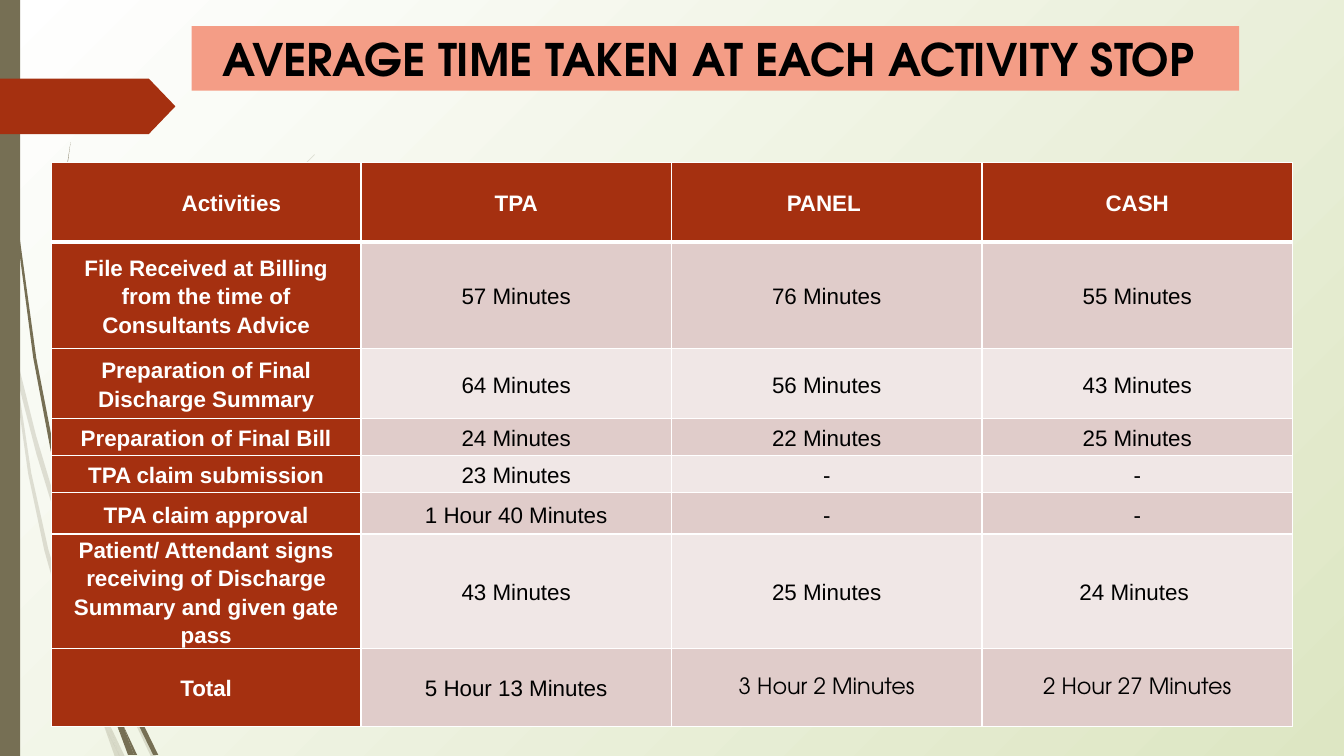
from dataclasses import dataclass

from lxml.etree import SubElement
from pptx import Presentation
from pptx.dml.color import RGBColor
from pptx.enum.shapes import MSO_SHAPE
from pptx.enum.text import MSO_ANCHOR, PP_ALIGN
from pptx.oxml import parse_xml
from pptx.oxml.ns import nsdecls, qn
from pptx.util import Inches, Pt

TITLE = "AVERAGE TIME TAKEN AT EACH ACTIVITY STOP "
ROWS = [
    ("Activities", "TPA", "PANEL ", "CASH"),
    ("File Received at Billing from the time of Consultants Advice",
     "57 Minutes", "76 Minutes", "55 Minutes"),
    ("Preparation of Final Discharge Summary", "64 Minutes", "56 Minutes", "43 Minutes"),
    ("Preparation of Final Bill", "24 Minutes", "22 Minutes", "25 Minutes"),
    ("TPA claim submission", "23 Minutes", "-", "-"),
    ("TPA claim approval", "1 Hour 40 Minutes", "-", "-"),
    ("Patient/ Attendant signs receiving of Discharge Summary and given gate pass",
     "43 Minutes", "25 Minutes", "24 Minutes "),
    ("Total", "5 Hour 13 Minutes", "3 Hour 2 Minutes", "2 Hour 27 Minutes"),
]
ROW_HEIGHTS = [0.79, 1.06, 0.69, 0.37, 0.37, 0.41, 0.89, 0.77]
COLUMN_WIDTHS = [3.07, 3.08, 3.08, 3.08]

PALE_WISPS = [
    [(0.11, 3.5), (0.09, 3.22), (0, 2.82), (0, 2.99), (0.1, 3.44)],
    [(0.58, 5.22), (0.84, 5.99), (0.85, 5.86), (0.62, 5.2), (0.36, 4.33),
     (0.14, 3.45), (0.17, 3.76), (0.36, 4.5)],
    [(0.92, 6.07), (0.88, 5.96), (0.88, 6.1), (1.23, 6.94), (1.5, 7.51),
     (1.55, 7.51), (1.27, 6.92)],
    [(1.19, 7.51), (1.24, 7.51), (1.05, 7.11)],
    [(0.93, 6.83), (0.7, 6.19), (0.48, 5.45), (0.31, 4.69), (0.17, 3.76),
     (0.11, 3.5), (0.28, 4.7), (0.44, 5.46), (0.65, 6.21), (0.92, 6.93),
     (1.01, 7.14), (0.99, 7.07)],
    [(0.88, 5.84), (0.95, 5.22), (1.1, 4.62), (1.6, 3.49), (2.29, 2.45),
     (2.68, 1.98), (3.12, 1.54), (3.12, 1.53), (2.68, 1.97), (2.28, 2.44),
     (1.58, 3.48), (1.07, 4.61), (0.91, 5.22), (0.85, 5.84), (0.88, 5.96)],
    [(1.01, 7.14), (1.14, 7.51), (1.19, 7.51)],
    [(0.96, 6.92), (0.93, 6.83), (0.99, 7.07), (1.01, 7.14), (1.19, 7.51), (1.05, 7.11)],
]
DARK_WISPS = [
    [(0.07, 1.1), (0.17, 2.33), (0.33, 3.55), (0.56, 4.77), (0.57, 4.81),
     (0.55, 4.53), (0.36, 3.55), (0.19, 2.32), (0.08, 1.09), (0.05, 0.48),
     (0.04, 0), (0.03, 0), (0.04, 0.48)],
    [(1.13, 6.49), (1.1, 6.41), (1.11, 6.56), (1.32, 7.08), (1.52, 7.49),
     (1.57, 7.49), (1.36, 7.06)],
    [(0.6, 4.72), (0.58, 4.53), (0.54, 3.49), (0.58, 2.45), (0.63, 1.93),
     (0.7, 1.41), (0.62, 1.93), (0.56, 2.45), (0.52, 3.49), (0.55, 4.49)],
    [(1.33, 7.49), (1.36, 7.49), (1.22, 7.19)],
    [(1.17, 7.22), (1.27, 7.49), (1.31, 7.49)],
    [(1.16, 7.06), (1.1, 6.91), (1.17, 7.22), (1.3, 7.49), (1.33, 7.49), (1.22, 7.19)],
]


@dataclass(frozen=True)
class Theme:
    accent: str = "A53010"
    olive: str = "766F54"
    salmon: str = "F49D86"
    band_dark: str = "E0CCCA"
    band_light: str = "F0E7E6"
    white: str = "FFFFFF"
    black: str = "000000"
    meadow: str = "DDE6C3"
    title_size: int = 32
    table_size: int = 16
    table_font: str = "Arial"
    display_font: str = "TeX Gyre Adventor"


theme = Theme()


def write_text(frame, text, size, font, color, bold=False, spacing=1.0, after=0):
    frame.word_wrap = True
    para = frame.paragraphs[0]
    para.alignment = PP_ALIGN.CENTER
    para.line_spacing = spacing
    para.space_before = Pt(0)
    para.space_after = Pt(after)
    span = para.add_run()
    span.text = text
    span.font.size = Pt(size)
    span.font.name = font
    span.font.bold = bold
    span.font.color.rgb = RGBColor.from_string(color)
    return para


def paint(shape, color, opacity=100):
    shape.shadow.inherit = False
    shape.line.fill.background()
    shape.fill.solid()
    shape.fill.fore_color.rgb = RGBColor.from_string(color)
    if opacity < 100:
        tint = shape._element.spPr.find(qn("a:solidFill"))[0]
        SubElement(tint, qn("a:alpha")).set("val", str(opacity * 1000))


def paint_background(slide):
    fill = slide.background.fill
    fill.gradient()
    for stop, color in zip(fill.gradient_stops, (theme.white, theme.meadow)):
        stop.color.rgb = RGBColor.from_string(color)
    linear = next(slide._element.iter(qn("a:lin")))
    linear.getparent().replace(linear, parse_xml(
        f'<a:path {nsdecls("a")} path="circle">'
        '<a:fillToRect l="0" t="0" r="100000" b="100000"/></a:path>'))


def add_wisp(slide, points, opacity):
    corners = [(Inches(x), Inches(y)) for x, y in points]
    builder = slide.shapes.build_freeform(*corners[0])
    builder.add_line_segments(corners[1:], close=True)
    paint(builder.convert_to_shape(), theme.olive, opacity)


def add_decor(slide):
    for wisps, opacity in ((PALE_WISPS, 20), (DARK_WISPS, 100)):
        for points in wisps:
            add_wisp(slide, points, opacity)
    strip = slide.shapes.add_shape(MSO_SHAPE.RECTANGLE, 0, 0, Inches(0.2), Inches(7.5))
    paint(strip, theme.olive)
    arrow = slide.shapes.add_shape(
        MSO_SHAPE.PENTAGON, 0, Inches(0.78), Inches(1.74), Inches(0.55))
    arrow.adjustments[0] = 0.48
    paint(arrow, theme.accent)


def add_borders(cell, row):
    heavy_side = {0: "B", 1: "T"}.get(row)
    for place, side in enumerate("LRTB"):
        width = Pt(3 if side == heavy_side else 1)
        cell._tc.get_or_add_tcPr().insert(place, parse_xml(
            f'<a:ln{side} {nsdecls("a")} w="{width}"><a:solidFill>'
            f'<a:srgbClr val="{theme.white}"/></a:solidFill></a:ln{side}>'))


def add_times_table(slide):
    table = slide.shapes.add_table(
        len(ROWS), len(COLUMN_WIDTHS), Inches(0.51), Inches(1.61),
        Inches(sum(COLUMN_WIDTHS)), Inches(sum(ROW_HEIGHTS))).table
    table.first_col = True
    for column, width in zip(table.columns, COLUMN_WIDTHS):
        column.width = Inches(width)
    for row, (texts, height) in enumerate(zip(ROWS, ROW_HEIGHTS)):
        table.rows[row].height = Inches(height)
        band = theme.band_dark if row % 2 else theme.band_light
        for col, text in enumerate(texts):
            cell = table.cell(row, col)
            heading = row == 0 or col == 0
            display = row == len(ROWS) - 1 and col >= 2
            cell.vertical_anchor = MSO_ANCHOR.MIDDLE
            cell.margin_left = cell.margin_right = Inches(0.07)
            cell.margin_top = cell.margin_bottom = 0
            cell.fill.solid()
            cell.fill.fore_color.rgb = RGBColor.from_string(theme.accent if heading else band)
            add_borders(cell, row)
            para = write_text(
                cell.text_frame, text, size=theme.table_size,
                font=theme.display_font if display else theme.table_font,
                color=theme.white if heading else theme.black,
                bold=heading, spacing=1.15, after=10 if display else 0)
            if row == col == 0:
                para._p.get_or_add_pPr().set("indent", str(Inches(0.5)))


def add_title(slide):
    title = slide.shapes.title
    title.left, title.top = Inches(1.9), Inches(0.26)
    title.width, title.height = Inches(10.39), Inches(0.64)
    title.fill.solid()
    title.fill.fore_color.rgb = RGBColor.from_string(theme.salmon)
    title.text_frame.vertical_anchor = MSO_ANCHOR.TOP
    write_text(title.text_frame, TITLE, size=theme.title_size,
               font=theme.display_font, color=theme.black, bold=True)


def main():
    deck = Presentation()
    deck.slide_width, deck.slide_height = Inches(13.33), Inches(7.5)
    page = deck.slides.add_slide(deck.slide_layouts[5])
    paint_background(page)
    add_decor(page)
    add_times_table(page)
    add_title(page)
    deck.save("out.pptx")


if __name__ == "__main__":
    main()
